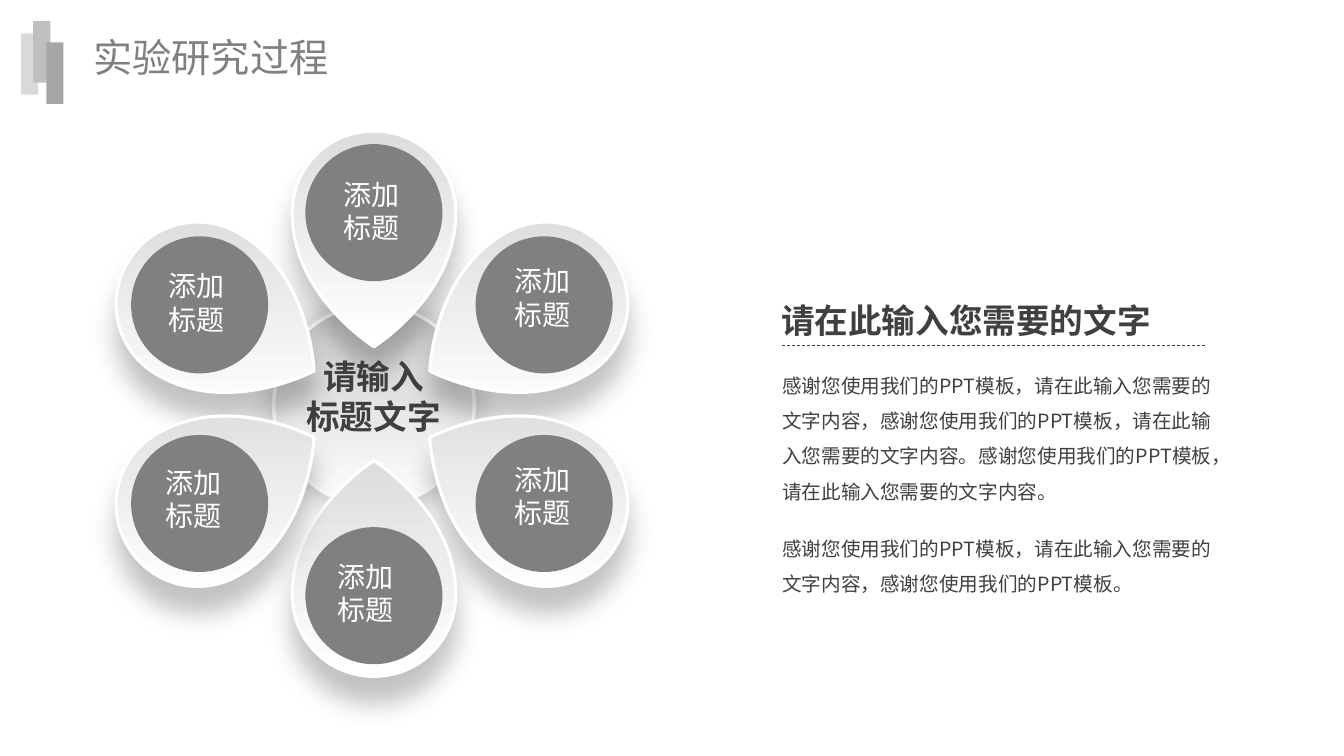
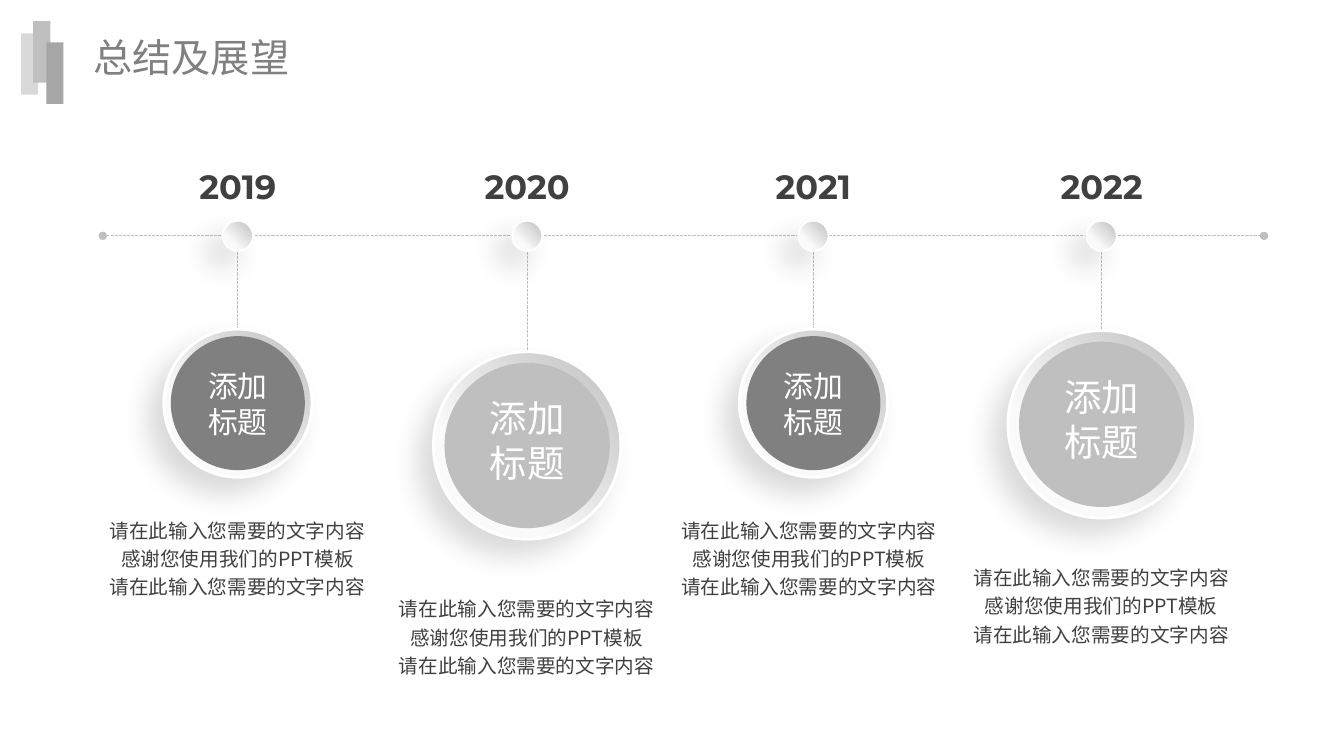
from math import cos, sin, radians

from lxml import etree
from pptx import Presentation
from pptx import util as u
from pptx.dml.color import RGBColor
from pptx.enum import dml, shapes, text
from pptx.oxml import parse_xml
from pptx.oxml.ns import nsdecls, qn

HUE = {"ink": "404040", "mid": "808080", "soft": "BFBFBF", "white": "FFFFFF",
       "pale": "D9D9D9", "gray": "A6A6A6"}
SANS, NUM = "Noto Sans CJK SC", "Montserrat"
LEFT, MID = text.PP_ALIGN.LEFT, text.PP_ALIGN.CENTER
OVAL, RECT = shapes.MSO_SHAPE.OVAL, shapes.MSO_SHAPE.RECTANGLE
LABEL = ["添加", "标题"]

# Gradients: angle and stops; shadows: colour, opacity, blur, distance, angle
DOME = (90, [(0, "CACACA"), (100, "FFFFFF")])
LEAF = (90, [(0, "DDDDDD"), (100, "FFFFFF")])
RIM = (135, [(0, "BFBFBF"), (70, "FAFAFA")])
DEEP = ("262626", 28, 18, 18, 90)
LOW = ("0D0D0D", 28, 22, 2, 90)
SIDE = ("000000", 15, 20, 15, 135)

# Right half of a petal, from its top to its tip, as cubic curves
HALF = [(0, -0.84), (0.44, -0.84), (0.79, -0.5), (0.81, -0.07),
        (0.81, -0.05), (0.81, -0.02), (0.81, 0),
        (0.8, 0.8), (0, 1.3), (0, 1.3)]


def rgb(name):
    return RGBColor.from_string(HUE[name])


def style(shape, fill, line=None, width=1, shade=None):
    """Fill with a colour name or a gradient; set outline and shadow."""
    if isinstance(fill, str):
        shape.fill.solid()
        shape.fill.fore_color.rgb = rgb(fill)
    else:
        ang, stops = fill
        gs = "".join(f'<a:gs pos="{pos * 1000}"><a:srgbClr val="{val}"/></a:gs>'
                     for pos, val in stops)
        shape.fill.background()
        prop = shape._element.spPr
        prop.replace(prop.find(qn("a:noFill")), parse_xml(
            f'<a:gradFill {nsdecls("a")} rotWithShape="1"><a:gsLst>{gs}</a:gsLst>'
            f'<a:lin ang="{ang * 60000}" scaled="0"/></a:gradFill>'))
    if line:
        shape.line.color.rgb = rgb(line)
        shape.line.width = u.Pt(width)
    else:
        shape.line.fill.background()
    shape.shadow.inherit = False
    if shade:
        val, alpha, blur, dist, ang = shade
        shape._element.spPr.find(qn("a:effectLst")).append(parse_xml(
            f'<a:outerShdw {nsdecls("a")} blurRad="{blur * 12700}" '
            f'dist="{dist * 12700}" dir="{ang * 60000}" algn="ctr" rotWithShape="0">'
            f'<a:srgbClr val="{val}"><a:alpha val="{alpha * 1000}"/></a:srgbClr>'
            f'</a:outerShdw>'))


def box(slide, kind, x, y, w, h, fill, **look):
    shape = slide.shapes.add_shape(kind, *map(u.Inches, (x, y, w, h)))
    style(shape, fill, **look)
    return shape


def disc(slide, x, y, size, fill, **look):
    """Circle centred on x, y."""
    box(slide, OVAL, x - size / 2, y - size / 2, size, size, fill, **look)


def write(slide, lines, x, y, w, h, size=14, hue="ink", font=SANS, bold=False,
          align=LEFT, gap=None, wrap=False, pad=(0.1, 0.05)):
    area = slide.shapes.add_textbox(*map(u.Inches, (x, y, w, h)))
    frame = area.text_frame
    frame.word_wrap = wrap
    frame.auto_size = text.MSO_AUTO_SIZE.SHAPE_TO_FIT_TEXT
    frame.margin_left = frame.margin_right = u.Inches(pad[0])
    frame.margin_top = frame.margin_bottom = u.Inches(pad[1])
    for i, line in enumerate(lines):
        para = frame.add_paragraph() if i else frame.paragraphs[0]
        para.alignment = align
        if gap:
            para.line_spacing = gap
        run = para.add_run()
        run.text = line
        run.font.size, run.font.bold = u.Pt(size), bold
        run.font.name = font
        run.font.color.rgb = rgb(hue)
        run.font._element.find(qn("a:latin")).addnext(
            parse_xml(f'<a:ea {nsdecls("a")} typeface="{font}"/>'))


def rule(slide, x1, y1, x2, y2, hue, width, dash, ends=False):
    line = slide.shapes.add_connector(shapes.MSO_CONNECTOR.STRAIGHT,
                                      *map(u.Inches, (x1, y1, x2, y2)))
    line.line.color.rgb = rgb(hue)
    line.line.width = u.Pt(width)
    line.line.dash_style = dash
    if ends:
        for tag in ("headEnd", "tailEnd"):
            line.line._get_or_add_ln().append(
                parse_xml(f'<a:{tag} {nsdecls("a")} type="oval"/>'))
    line._element.spPr.append(parse_xml(f'<a:effectLst {nsdecls("a")}/>'))


def bars(slide):
    """Draw the three bars and move them to the shared layout."""
    for x, y, hue in ((0.21, 0.33, "pale"), (0.33, 0.21, "soft"),
                      (0.46, 0.42, "gray")):
        bar = box(slide, RECT, x, y, 0.17, 0.61, hue)
        slide.slide_layout.shapes._spTree.append(bar._element)


def start(deck, title, width):
    """Blank slide with its title."""
    slide = deck.slides.add_slide(deck.slide_layouts[6])
    write(slide, [title], 0.83, 0.28, width, 0.57, size=28, hue="mid")
    return slide


def curve(slide, pts):
    """Closed outline: a first point, then three points for each cubic."""
    spots = [(u.Inches(x), u.Inches(y)) for x, y in pts]
    form = slide.shapes.build_freeform(*spots[0])
    form.add_line_segments(spots[1:], close=True)
    shape = form.convert_to_shape()
    track = next(shape._element.iter(qn("a:path")))
    legs = track.findall(qn("a:lnTo"))
    for i in range(0, len(legs), 3):
        bend = etree.Element(qn("a:cubicBezTo"))
        legs[i].addprevious(bend)
        for leg in legs[i:i + 3]:
            bend.append(leg[0])
            track.remove(leg)
    return shape


def petal(slide, x, y, turn, lift, dx, dy):
    """Drop around x, y with a labelled disc; turn is clockwise from up."""
    c, s = cos(radians(turn)), sin(radians(turn))
    ring = HALF + [(-px, py) for px, py in HALF[-2::-1]]
    shape = curve(slide, [(x + px * c - py * s, y + px * s + py * c)
                          for px, py in ring])
    style(shape, LEAF, line="white", width=2.25, shade=DEEP)
    cx, cy = x + lift * s, y - lift * c
    disc(slide, cx, cy, 1.36, "mid")
    write(slide, LABEL, cx + dx, cy + dy, 0.76, 0.77, size=20, hue="white")


def flower(slide, x, y):
    disc(slide, x, y + 0.01, 1.99, DOME, line="white", width=2.5, shade=LOW)
    write(slide, ["请输入", "标题文字"], x - 0.78, y - 0.53, 1.55, 0.91,
          size=24, bold=True, align=MID)
    # Petal offset, turn, disc lift and label offset
    for px, py, *spec in ((0, -1.87, 0, 0.03, -0.4, -0.4),
                          (-1.72, -0.98, 300, 0.01, -0.41, -0.41),
                          (1.68, -0.98, 60, 0.01, -0.39, -0.46),
                          (1.68, 0.98, 120, 0.01, -0.39, -0.46),
                          (0, 1.86, 180, 0.04, -0.46, -0.41),
                          (-1.72, 0.98, 240, 0.01, -0.44, -0.43)):
        petal(slide, x + px, y + py, *spec)


def prose(slide, x, y):
    """Heading, dashed rule and two paragraphs."""
    rule(slide, x, y + 0.58, x + 4.19, y + 0.58, "ink", 0.5, dml.MSO_LINE.DASH)
    write(slide, ["请在此输入您需要的文字"], x - 0.11, y, 4.42, 0.51, size=24,
          bold=True, gap=1.2, wrap=True)
    long = ("感谢您使用我们的PPT模板，请在此输入您需要的文字内容，"
            "感谢您使用我们的PPT模板，请在此输入您需要的文字内容。"
            "感谢您使用我们的PPT模板，请在此输入您需要的文字内容。")
    short = "感谢您使用我们的PPT模板，请在此输入您需要的文字内容，感谢您使用我们的PPT模板。"
    for body, top, high in ((long, 0.74, 1.35), (short, 2.36, 0.65)):
        write(slide, [body], x, y + top, 4.3, high, gap=1.5, wrap=True, pad=(0, 0))


def stage(slide, x, y, year, big, mid, note, shift):
    """One year: dot on the axis, spoke, ringed disc and note below."""
    ring, core, size, hue, w, h, lift = (
        (1.86, 1.64, 26.7, "soft", 0.95, 1, 0.55) if big
        else (1.47, 1.33, 21.3, "mid", 0.8, 0.82, 0.4))
    rule(slide, x, y, x, y + 1.31, "soft", 0.75, dml.MSO_LINE.SQUARE_DOT, ends=True)
    disc(slide, x, y, 0.3, RIM, line="white", width=1.25, shade=SIDE)
    write(slide, [year], x - 0.55, y - 0.74, 1.1, 0.5, size=24, font=NUM,
          bold=True, align=MID)
    disc(slide, x, y + mid, ring, RIM, line="white", width=2, shade=SIDE)
    disc(slide, x, y + mid, core, hue)
    write(slide, LABEL, x - w / 2, y + mid - lift, w, h, size=size, hue="white",
          align=MID)
    ask = "请在此输入您需要的文字内容"
    write(slide, [ask, "感谢您使用我们的PPT模板", ask], x - 1.45 + shift, y + note,
          2.89, 0.93, align=MID, gap=1.2, wrap=True)


def years(slide, x, y):
    rule(slide, x, y, x + 11.52, y, "soft", 0.75, dml.MSO_LINE.SQUARE_DOT, ends=True)
    # Offset, year, large disc, disc centre, note top, note shift
    for dx, *spec in ((1.34, "2019", False, 1.66, 2.71, 0),
                      (4.21, "2020", True, 2.08, 3.49, 0),
                      (7.05, "2021", False, 1.66, 2.71, -0.04),
                      (9.91, "2022", True, 1.87, 3.18, 0)):
        stage(slide, x + dx, y, *spec)


def main():
    deck = Presentation()
    deck.slide_width, deck.slide_height = u.Inches(40 / 3), u.Inches(7.5)
    slide = start(deck, "实验研究过程", 2.56)
    bars(slide)
    flower(slide, 3.71, 4.01)
    prose(slide, 7.76, 2.85)
    years(start(deck, "总结及展望", 2.17), 1.02, 2.34)
    deck.save("out.pptx")


if __name__ == "__main__":
    main()
